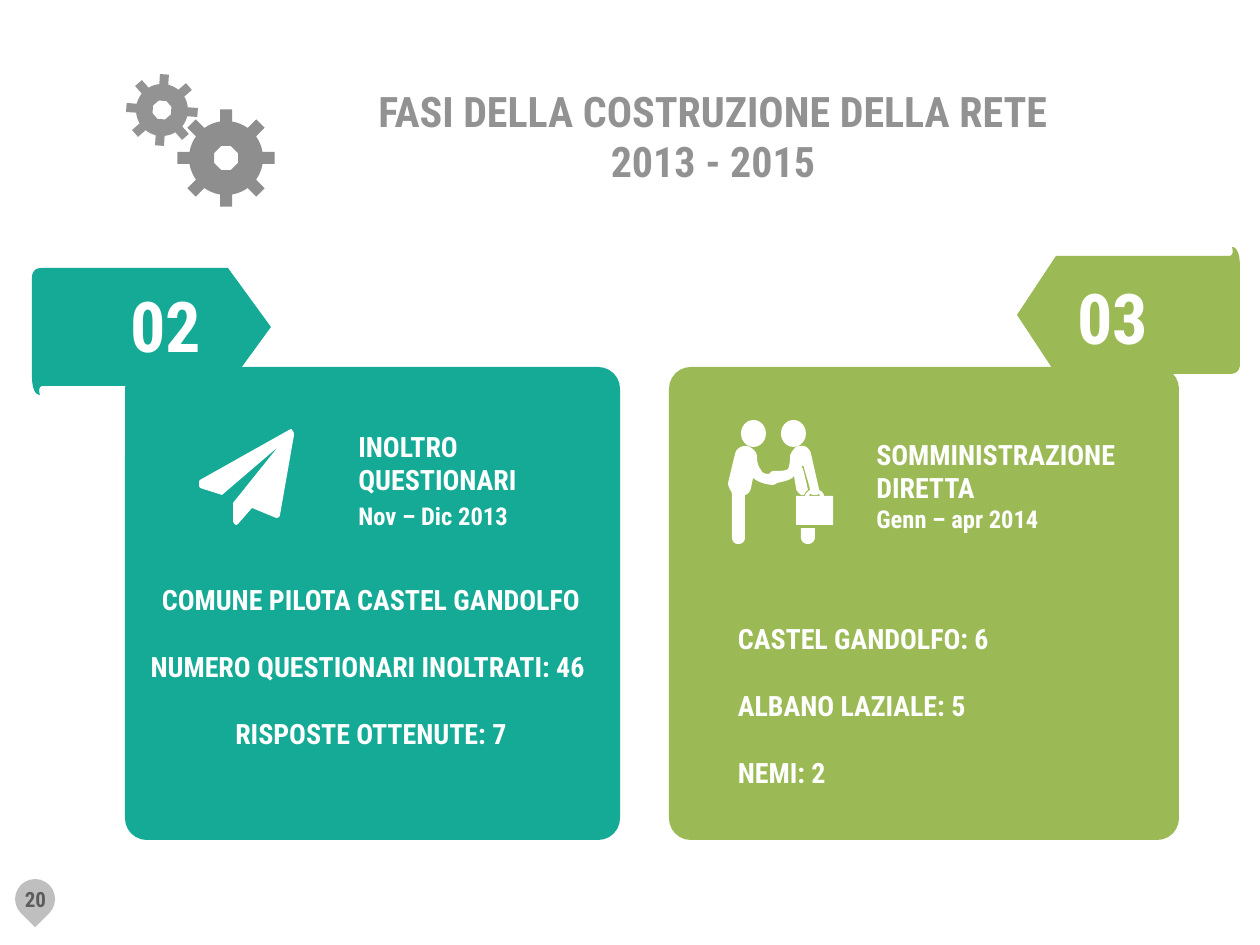
import math
from lxml import etree
from pptx import Presentation
from pptx import util as u
from pptx.dml.color import RGBColor
from pptx.enum import shapes, text
from pptx.oxml import ns

SCALE = 914400 / 126
COLORS = {
    "teal": "15AA96", "green": "9BB955", "white": "FFFFFF", "title": "929292",
    "gear": "727272", "pin": "BFBFBF", "number": "5C5C5C",
}
LEFT, CENTER = text.PP_ALIGN.LEFT, text.PP_ALIGN.CENTER


def px(value):
    return u.Emu(round(value * SCALE))


def trace(steps):
    points = [steps[0]]
    for step in steps[1:]:
        if len(step) == 2:
            points.append(step)
            continue
        (x0, y0), (x1, y1, x2, y2, x3, y3) = points[-1], step
        for i in range(1, 9):
            t = i / 8
            a, b, c, d = (1 - t) ** 3, 3 * t * (1 - t) ** 2, 3 * t * t * (1 - t), t ** 3
            points.append((a * x0 + b * x1 + c * x2 + d * x3,
                           a * y0 + b * y1 + c * y2 + d * y3))
    return points


class Painter:
    font = "Roboto Condensed"

    def __init__(self, slide):
        self.slide = slide

    def paint(self, shape, color, opacity=100):
        shape.shadow.inherit = False
        shape.fill.solid()
        shape.fill.fore_color.rgb = RGBColor.from_string(COLORS[color])
        shape.line.fill.background()
        if opacity < 100:
            tint = shape._element.spPr.find(".//" + ns.qn("a:srgbClr"))
            etree.SubElement(tint, ns.qn("a:alpha")).set("val", str(opacity * 1000))
        return shape

    def preset(self, kind, x, y, w, h, color):
        shape = self.slide.shapes.add_shape(kind, px(x), px(y), px(w), px(h))
        return self.paint(shape, color)

    def card(self, x, y, w, h, color):
        shape = self.preset(shapes.MSO_SHAPE.ROUNDED_RECTANGLE, x, y, w, h, color)
        shape.adjustments[0] = 0.046

    def outline(self, color, *contours, opacity=100):
        builder = None
        for steps in contours:
            points = [(px(x), px(y)) for x, y in trace(steps)]
            if builder is None:
                builder = self.slide.shapes.build_freeform(*points[0], scale=1.0)
            else:
                builder.move_to(*points[0])
            builder.add_line_segments(points[1:], close=True)
        return self.paint(builder.convert_to_shape(), color, opacity)

    def gear(self, cx, cy, outer, body, tooth, hole, tilt, opacity):
        def at(radius, angle):
            angle += math.radians(tilt)
            return cx + radius * math.cos(angle), cy + radius * math.sin(angle)

        rim, turn = [], math.pi / 4
        root, tip = math.asin(tooth / body), math.asin(tooth / outer)
        for i in range(8):
            middle = i * turn
            rim += [at(body, middle - root), at(outer, middle - tip),
                    at(outer, middle + tip), at(body, middle + root)]
            gap = turn - 2 * root
            rim += [at(body, middle + root + gap * k / 4) for k in (1, 2, 3)]
        center = [at(hole, (i + 0.5) * turn) for i in range(8)]
        self.outline("gear", rim, center, opacity=opacity)

    def flag(self, back, shoulder, tip, middle, side, curl, color):
        def y(offset):
            return middle + curl * offset

        def x(offset):
            return back + side * offset

        self.outline(color, [
            (shoulder, y(-59)), (x(10), y(-59)),
            (x(3), y(-59), back, y(-55), back, y(-49)), (back, y(49)),
            (back, y(55), x(1), y(68), x(8), y(68)),
            (x(8), y(68), x(5), y(59), x(11), y(59)),
            (shoulder, y(59)), (tip, middle)])

    def label(self, x, y, w, h, lines, color="white", align=LEFT, inset=True,
              wrap=True, gap=0, middle=False):
        box = self.slide.shapes.add_textbox(px(x), px(y), px(w), px(h))
        frame = box.text_frame
        frame.word_wrap = wrap
        if middle:
            frame.vertical_anchor = text.MSO_ANCHOR.MIDDLE
        if not inset:
            frame.margin_left = frame.margin_right = 0
            frame.margin_top = frame.margin_bottom = 0
        for i, (words, size) in enumerate(lines):
            para = frame.add_paragraph() if i else frame.paragraphs[0]
            para.alignment = align
            if i and gap:
                para.space_before = u.Pt(gap)
            for j, part in enumerate(words.split("\n")):
                if j:
                    para.add_line_break()
                span = para.add_run()
                span.text = part
                span.font.name = self.font
                span.font.size = u.Pt(size)
                span.font.bold = True
                span.font.color.rgb = RGBColor.from_string(COLORS[color])


def draw_handshake(page):
    for x in (741, 781):
        page.preset(shapes.MSO_SHAPE.OVAL, x, 420, 25, 27, "white")
    page.outline("white", [
        (801, 528), (801, 537), (801, 542, 805, 544, 808, 544),
        (811, 544, 815, 542, 815, 537), (815, 528)])
    people = [
        (735, 454), (728, 483), (728, 486, 730, 490, 732, 493), (732, 537),
        (732, 542, 735, 544, 738, 544), (742, 544, 745, 542, 745, 537),
        (745, 495), (749, 494, 750, 491, 751, 488), (753, 478),
        (757, 481, 762, 484, 772, 485), (774, 485, 776, 484, 777, 483),
        (786, 481, 791, 480, 794, 476), (796, 488),
        (796, 491, 799, 493, 801, 495), (804, 495),
        (805, 493, 806, 491, 808, 490), (806, 481, 804, 473, 803, 469),
        (800, 465, 803, 465, 804, 467), (804, 470, 809, 483, 810, 490),
        (808, 491, 805, 494, 805, 496), (796, 496), (796, 525), (833, 525),
        (833, 496), (824, 496), (824, 494, 822, 491, 819, 490), (819, 489),
        (811, 454), (810, 449, 806, 446, 803, 446),
        (801, 446, 798, 446, 796, 447), (794, 449, 791, 452, 790, 456),
        (790, 464, 789, 467, 788, 469), (785, 471, 781, 471, 774, 471),
        (771, 471, 770, 473, 769, 474), (765, 474, 762, 473, 761, 470),
        (759, 467, 757, 464, 757, 457), (757, 452, 753, 449, 750, 447),
        (748, 446, 746, 446, 745, 446), (741, 446, 736, 449, 735, 454)]
    handle = [
        (809, 496), (809, 495, 810, 494, 811, 494),
        (812, 495, 814, 495, 815, 495), (816, 495, 818, 495, 818, 494),
        (819, 494, 820, 495, 820, 496)]
    page.outline("white", people, handle)


def draw_plane(page):
    page.outline("white", [
        (294, 435), (280, 515), (280, 517, 278, 518, 276, 518), (252, 508),
        (238, 524), (238, 524, 237, 525, 236, 525),
        (234, 524, 233, 522, 233, 520), (233, 503), (278, 447), (222, 495),
        (200, 488), (199, 486, 199, 486, 199, 485),
        (199, 483, 199, 481, 200, 480), (289, 430),
        (291, 429, 292, 429, 292, 430), (294, 432, 294, 434, 294, 435)])


def main():
    deck = Presentation()
    deck.slide_width, deck.slide_height = px(1260), px(945)
    page = Painter(deck.slides.add_slide(deck.slide_layouts[6]))

    pin = page.preset(shapes.MSO_SHAPE.TEAR, 15, 879, 40, 40, "pin")
    pin.rotation = 135
    page.label(4, 880, 63, 38, [("20", 12)], "number", CENTER, middle=True)

    page.card(125, 367, 495, 473, "teal")
    page.card(669, 367, 510, 473, "green")
    page.flag(32, 228, 271, 327, 1, 1, "teal")
    page.flag(1240, 1056, 1017, 315, -1, -1, "green")
    for x, y, number in ((118, 276, "02"), (1065, 268, "03")):
        page.label(x, y, 105, 97, [(number, 40)], wrap=False)

    draw_plane(page)
    page.label(346, 423, 278, 175,
               [("INOLTRO QUESTIONARI", 16), ("Nov – Dic 2013", 14)], gap=2.5)
    page.label(140, 583, 462, 237,
               [("COMUNE PILOTA CASTEL GANDOLFO", 16),
                ("NUMERO QUESTIONARI INOLTRATI: 46 ", 16),
                ("RISPOSTE OTTENUTE: 7", 16)], align=CENTER, inset=False, gap=19)

    draw_handshake(page)
    page.label(864, 431, 312, 111,
               [("SOMMINISTRAZIONE", 16), ("DIRETTA", 16), ("Genn – apr 2014", 14)])
    page.label(738, 622, 355, 192,
               [("CASTEL GANDOLFO: 6", 16), ("ALBANO LAZIALE: 5", 16),
                ("NEMI: 2", 16)], inset=False, gap=19)

    page.label(283, 79, 860, 113,
               [("FASI DELLA COSTRUZIONE DELLA RETE\n2013 - 2015", 24)],
               "title", CENTER, inset=False, wrap=False, middle=True)
    page.gear(226, 158, 49, 37, 6, 13, 0, 80)
    page.gear(162, 110, 36, 26, 4.5, 10, 4, 76)
    deck.save("out.pptx")


if __name__ == "__main__":
    main()
